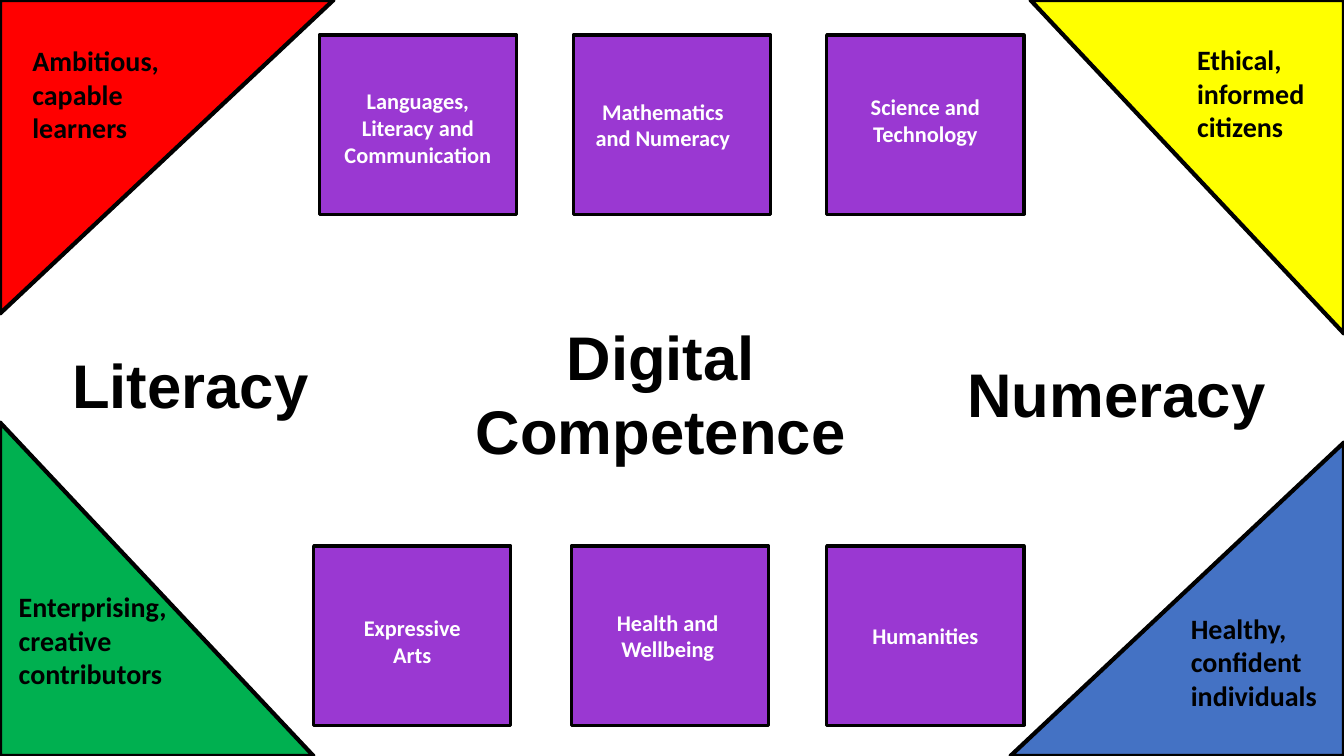
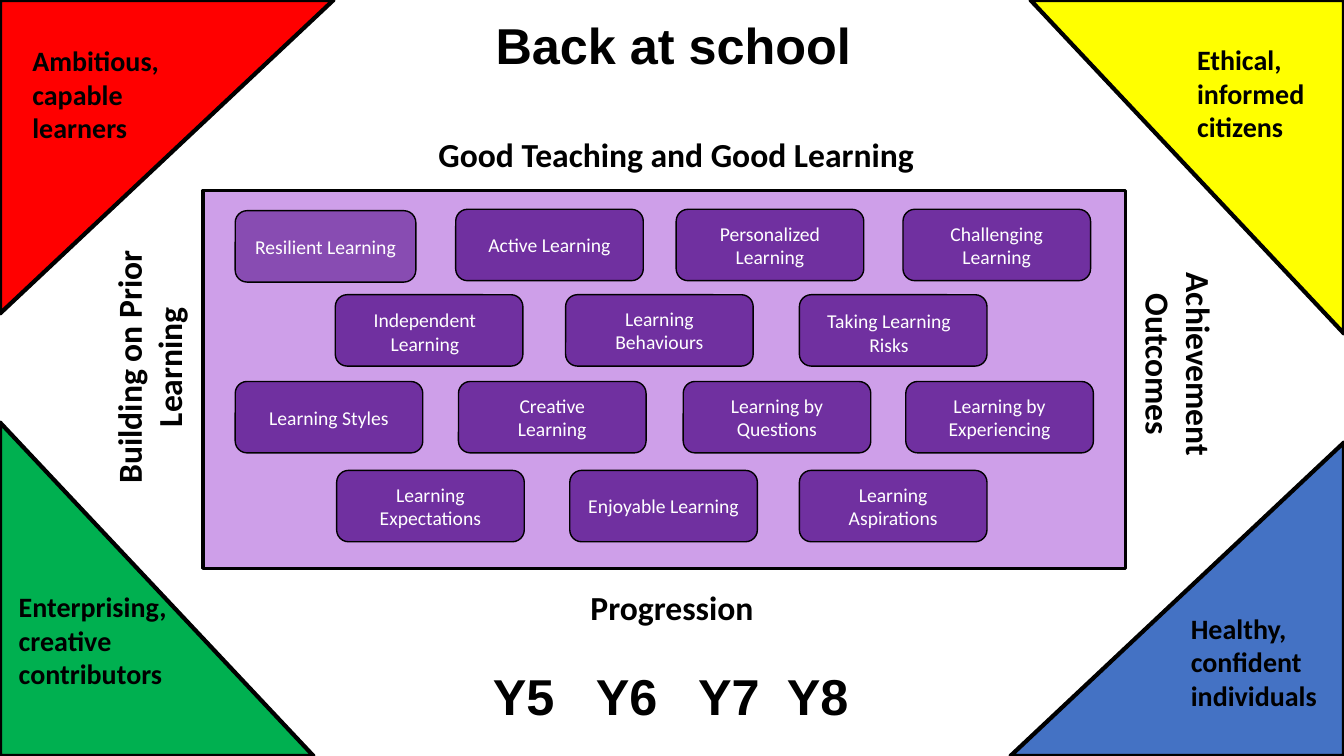
from lxml import etree
from pptx import Presentation
from pptx.dml.color import RGBColor
from pptx.enum.shapes import MSO_SHAPE
from pptx.enum.text import MSO_ANCHOR, MSO_AUTO_SIZE, PP_ALIGN
from pptx.oxml.ns import qn
from pptx.util import Pt

RECTANGLE = MSO_SHAPE.RECTANGLE
ROUNDED = MSO_SHAPE.ROUNDED_RECTANGLE
TRIANGLE = MSO_SHAPE.RIGHT_TRIANGLE
TOP, MIDDLE = MSO_ANCHOR.TOP, MSO_ANCHOR.MIDDLE
LEFT, CENTER = PP_ALIGN.LEFT, PP_ALIGN.CENTER
NO_AUTOFIT = MSO_AUTO_SIZE.NONE

BLACK = RGBColor(0, 0, 0)
WHITE = RGBColor(255, 255, 255)
RED = RGBColor(255, 0, 0)
GREEN = RGBColor(0, 176, 80)
YELLOW = RGBColor(255, 255, 0)
BLUE = RGBColor(68, 114, 196)
VIOLET = RGBColor(154, 56, 210)
PURPLE = RGBColor(112, 48, 160)

SLIDE_WIDTH, SLIDE_HEIGHT = 960, 540
CORNER_WIDTH, CORNER_HEIGHT = 224, 238.3
TITLE_ONLY = 5

CORNER_FONT = {"name": "Calibri", "size": Pt(20), "bold": True}
AREA_FONT = {"name": "Calibri", "size": Pt(16), "bold": True}
SKILL_FONT = {"name": "Calibri", "size": Pt(14), "bold": False}
EDGE_FONT = {"name": "Calibri", "size": Pt(24), "bold": True}
LARGE_FONT = {"name": "Arial", "size": Pt(44), "bold": True}
TITLE_FONT = {"name": "Arial", "size": Pt(36), "bold": True}

CORNERS = [
    ("Ambitious, capable learners", RED, 90, False, False, (16, 27.5, 142, 80)),
    ("Enterprising, creative contributors", GREEN, 0, False, True, (6.3, 417.5, 152, 80)),
    ("Ethical, informed citizens", YELLOW, 180, True, False, (848, 26.8, 140, 80)),
    ("Healthy, confident individuals", BLUE, 270, True, True, (843.5, 433, 131, 80)),
]

AREA_SIZE = (141, 128)
AREA_ROWS = [
    (25, [(228, "Languages, Literacy and Communication"),
          (409.5, "Mathematics and Numeracy"),
          (590.5, "Science and Technology")]),
    (390, [(224, "Expressive\nArts"),
           (408, "Health and\nWellbeing"),
           (590.5, "Humanities")]),
]
COMPETENCES = [
    ("Literacy", (44.5, 244, 212, 60)),
    ("Numeracy", (684, 250.5, 258, 60)),
]

PANEL = (145, 136, 659, 270)
SKILL_SIZE = (134, 51)
SKILL_ROWS = [
    (149.5, [(325.5, "Active Learning"), (483, "Personalized Learning"),
             (645, "Challenging Learning")]),
    (210.5, [(239.5, "Independent Learning"), (404, "Learning Behaviours"),
             (571, "Taking Learning Risks")]),
    (272.5, [(168, "Learning Styles"), (327.5, "Creative Learning"),
             (488, "Learning by Questions"), (647, "Learning by Experiencing")]),
    (336, [(240.5, "Learning Expectations"), (407, "Enjoyable Learning"),
           (571, "Learning Aspirations")]),
]
EDGES = [
    ("Good Teaching and Good Learning", (305, 92, 356, 36), 0),
    ("Progression", (346, 415.5, 268, 36), 0),
    ("Building on Prior Learning", (11.5, 229.5, 190, 65.5), 270),
    ("Achievement Outcomes", (752.5, 227.5, 179, 65.5), 90),
]
YEARS = "Y5\tY6\tY7\tY8"
YEAR_TABS = (73.5, 146.5, 210)

WIDE_LABELS = {"Resilient Learning", "Enjoyable Learning"}
NUDGES = {
    "Languages, Literacy and Communication": (0, 2),
    "Mathematics and Numeracy": (-6.5, 0),
    "Science and Technology": (0, -3.5),
    "Expressive\nArts": (0, 4),
    "Health and\nWellbeing": (-1.5, 0),
    "Independent Learning": (-3, 1),
    "Taking Learning Risks": (-3, 1.5),
}


def points(box):
    return [Pt(value) for value in box]


def write(shape, text, font, color=BLACK, align=CENTER, anchor=TOP, side=7.2, nudge=(0, 0)):
    frame = shape.text_frame
    across, down = nudge
    frame.text = text
    settings = {
        "word_wrap": True, "auto_size": NO_AUTOFIT, "vertical_anchor": anchor,
        "margin_left": Pt(side + max(0, 2 * across)),
        "margin_right": Pt(side + max(0, -2 * across)),
        "margin_top": Pt(3.6 + max(0, 2 * down)),
        "margin_bottom": Pt(3.6 + max(0, -2 * down)),
    }
    for name, value in settings.items():
        setattr(frame, name, value)
    for paragraph in frame.paragraphs:
        paragraph.alignment = align
        for run in paragraph.runs:
            for name, value in font.items():
                setattr(run.font, name, value)
            run.font.color.rgb = color


def add_text(slide, text, box, font, align=CENTER, rotation=0):
    shape = slide.shapes.add_textbox(*points(box))
    shape.rotation = rotation
    write(shape, text, font, align=align)
    return shape


def add_box(slide, kind, box, fill, line_width, opacity=100):
    shape = slide.shapes.add_shape(kind, *points(box))
    shape.shadow.inherit = False
    shape.fill.solid()
    shape.fill.fore_color.rgb = fill
    shape.line.color.rgb = BLACK
    shape.line.width = Pt(line_width)
    if opacity < 100:
        color = shape.fill._xPr.find(qn("a:solidFill"))[0]
        etree.SubElement(color, qn("a:alpha")).set("val", str(opacity * 1000))
    return shape


def add_corners(slide):
    for text, fill, rotation, right, bottom, text_box in CORNERS:
        shift = (CORNER_HEIGHT - CORNER_WIDTH) / 2 if rotation % 180 else 0
        left = SLIDE_WIDTH - CORNER_WIDTH - shift if right else shift
        top = SLIDE_HEIGHT - CORNER_HEIGHT + shift if bottom else -shift
        triangle = add_box(slide, TRIANGLE, (left, top, CORNER_WIDTH, CORNER_HEIGHT), fill, 3)
        triangle.rotation = rotation
        add_text(slide, text, text_box, CORNER_FONT, LEFT)


def add_label_box(slide, kind, box, text, font, fill, line_width, side, opacity=100):
    shape = add_box(slide, kind, box, fill, line_width, opacity)
    write(shape, text, font, WHITE, anchor=MIDDLE,
          side=7 if text in WIDE_LABELS else side, nudge=NUDGES.get(text, (0, 0)))


def add_label_rows(slide, kind, rows, size, *style):
    for top, cells in rows:
        for left, text in cells:
            add_label_box(slide, kind, (left, top, *size), text, *style)


def add_slide(presentation, title, box, font):
    slide = presentation.slides.add_slide(presentation.slide_layouts[TITLE_ONLY])
    shape = slide.shapes.title
    shape.left, shape.top, shape.width, shape.height = points(box)
    write(shape, title, font)
    add_corners(slide)
    return slide


def build_competences(presentation):
    slide = add_slide(presentation, "Digital\nCompetence", (312, 224, 320, 114), LARGE_FONT)
    add_label_rows(slide, RECTANGLE, AREA_ROWS, AREA_SIZE, AREA_FONT, VIOLET, 2.25, 14)
    for text, box in COMPETENCES:
        add_text(slide, text, box, LARGE_FONT, LEFT)


def build_school(presentation):
    slide = add_slide(presentation, "Back at school", (310, 6.5, 342, 51), TITLE_FONT)
    add_box(slide, RECTANGLE, PANEL, VIOLET, 2.25, 48)
    add_label_box(slide, ROUNDED, (168, 150.5, 129, 51), "Resilient Learning",
                  SKILL_FONT, PURPLE, 1, 17, 74)
    add_label_rows(slide, ROUNDED, SKILL_ROWS, SKILL_SIZE, SKILL_FONT, PURPLE, 1, 17)
    for text, box, rotation in EDGES:
        add_text(slide, text, box, EDGE_FONT, rotation=rotation)
    years = add_text(slide, YEARS, (345, 471.5, 275, 51), TITLE_FONT, LEFT)
    properties = years.text_frame.paragraphs[0]._p.get_or_add_pPr()
    tabs = etree.SubElement(properties, qn("a:tabLst"))
    for position in YEAR_TABS:
        etree.SubElement(tabs, qn("a:tab"), pos=str(Pt(position)), algn="l")


def main():
    presentation = Presentation()
    presentation.slide_width = Pt(SLIDE_WIDTH)
    presentation.slide_height = Pt(SLIDE_HEIGHT)
    build_competences(presentation)
    build_school(presentation)
    presentation.save("out.pptx")


if __name__ == "__main__":
    main()
